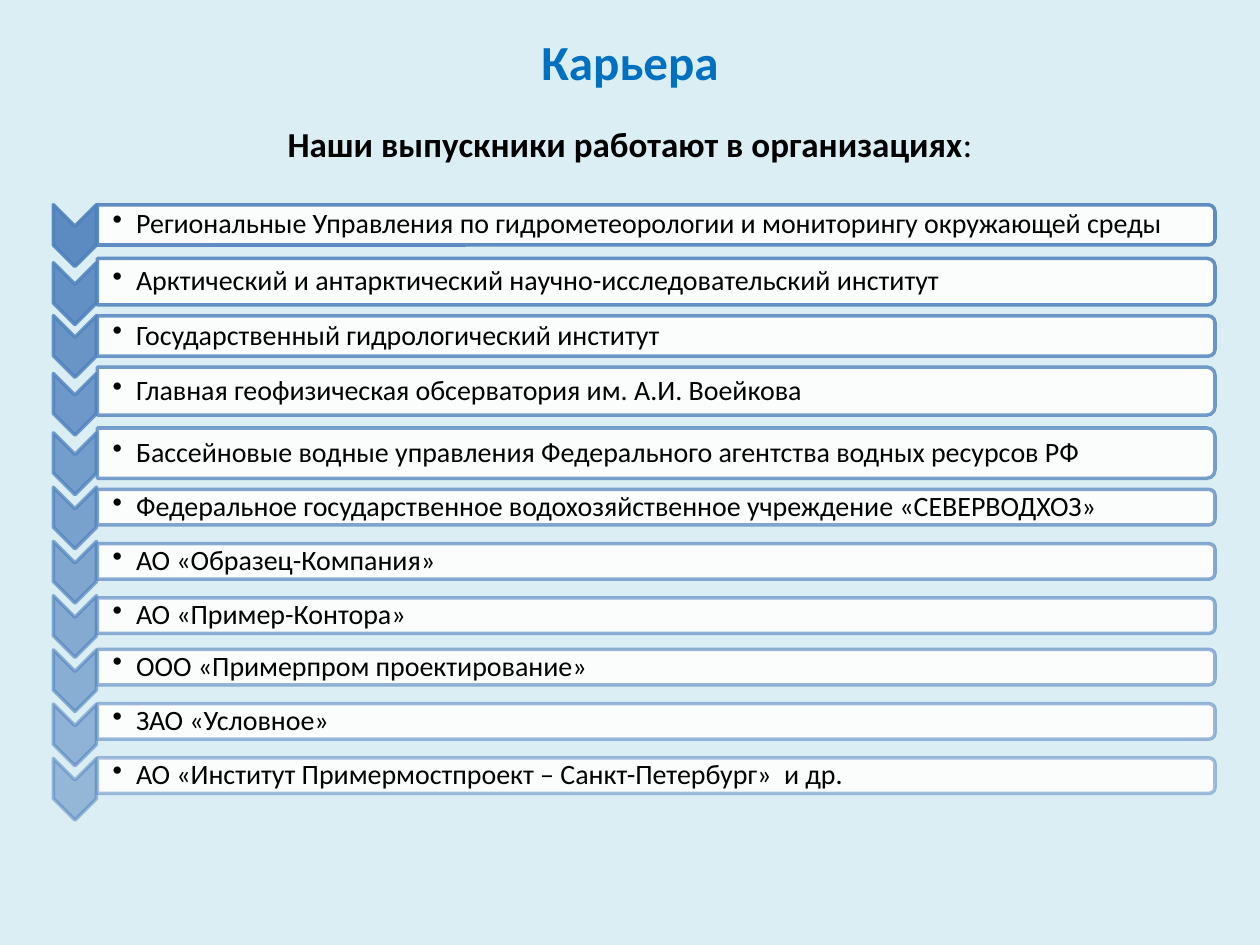
import pptx
import pptx.util
import pptx.dml.color
import pptx.enum.shapes
import pptx.enum.text
import pptx.oxml
import pptx.oxml.ns

Pt = pptx.util.Pt
MSO_SHAPE = pptx.enum.shapes.MSO_SHAPE
PP_ALIGN = pptx.enum.text.PP_ALIGN
MSO_ANCHOR = pptx.enum.text.MSO_ANCHOR

BACKGROUND = pptx.dml.color.RGBColor(0xDB, 0xEE, 0xF4)
TITLE_BLUE = pptx.dml.color.RGBColor(0x00, 0x70, 0xC0)
BLUE = pptx.dml.color.RGBColor(0x4F, 0x81, 0xBD)
WHITE = pptx.dml.color.RGBColor(0xFF, 0xFF, 0xFF)
BLACK = pptx.dml.color.RGBColor(0x00, 0x00, 0x00)


def add_text(p, text, size=16, color=BLACK, bold=False, align=PP_ALIGN.LEFT):
    p.alignment = align
    r = p.add_run()
    r.text = text
    r.font.name = "Calibri"
    r.font.size = Pt(size)
    r.font.bold = bold
    r.font.color.rgb = color


def add_vertical_shape(kind, cx, cy, w, h, fill, fill_alpha, line_alpha):
    sp = s.shapes.add_shape(kind, Pt(cx - w / 2), Pt(cy - h / 2), Pt(w), Pt(h))
    sp.rotation = 90
    sp.shadow.inherit = False
    sp.fill.solid()
    sp.fill.fore_color.rgb = fill
    sp.line.color.rgb = BLUE
    sp.line.width = Pt(2)
    colors = sp._element.spPr.iter(pptx.oxml.ns.qn("a:srgbClr"))
    for clr, alpha in zip(list(colors), (fill_alpha, line_alpha)):
        clr.append(pptx.oxml.parse_xml(
            f'<a:alpha {pptx.oxml.ns.nsdecls("a")} val="{alpha * 1000}"/>'))


prs = pptx.Presentation()
prs.slide_width, prs.slide_height = Pt(720), Pt(540)
s = prs.slides.add_slide(prs.slide_layouts[5])
s.background.fill.solid()
s.background.fill.fore_color.rgb = BACKGROUND

title = s.shapes.title
title.left, title.top, title.width, title.height = Pt(0), Pt(15), Pt(720), Pt(40)
title.text_frame.vertical_anchor = MSO_ANCHOR.MIDDLE
add_text(title.text_frame.paragraphs[0], "Карьера", size=28, color=TITLE_BLUE,
         bold=True, align=PP_ALIGN.CENTER)

subtitle = s.shapes.add_textbox(Pt(0), Pt(66.5), Pt(720), Pt(31.5))
subtitle.text_frame.word_wrap = True
p = subtitle.text_frame.paragraphs[0]
add_text(p, "Наши выпускники работают в организациях", size=20, bold=True,
         align=PP_ALIGN.CENTER)
add_text(p, ":", size=20, align=PP_ALIGN.CENTER)

employers = [
    ("Региональные Управления по гидрометеорологии и мониторингу окружающей среды", 128.5, 23, 134.6),
    ("Арктический и антарктический научно-исследовательский институт", 161, 26.6, 167.8),
    ("Государственный гидрологический институт", 192, 23, 198),
    ("Главная геофизическая обсерватория им. А.И. Воейкова", 223.5, 27.4, 231),
    ("Бассейновые водные управления Федерального агентства водных ресурсов РФ", 259, 28.8, 265),
    ("Федеральное государственное водохозяйственное учреждение «СЕВЕРВОДХОЗ»", 289.8, 20.2, 296),
    ("АО «Образец-Компания»", 320.8, 20.2, 327),
    ("АО «Пример-Контора»", 351.8, 20.2, 358),
    ("ООО «Примерпром проектирование»", 381.2, 20.2, 389),
    ("ЗАО «Условное»", 412.2, 20.2, 420),
    ("АО «Институт Примермостпроект – Санкт-Петербург»  и др.", 443.2, 20.2, 451),
]

BAR_LEFT, BAR_LENGTH = 55.7, 638.6

for i, (employer, cy, height, chevron_cy) in enumerate(employers):
    alpha = 90 - 4 * i
    add_vertical_shape(MSO_SHAPE.CHEVRON, 42.8, chevron_cy, 35.3, 24.6,
                       BLUE, alpha, alpha)
    add_vertical_shape(MSO_SHAPE.ROUND_2_SAME_RECTANGLE, BAR_LEFT + BAR_LENGTH / 2,
                       cy, height, BAR_LENGTH, WHITE, 90, alpha)
    text_height = height - 2.2
    box = s.shapes.add_textbox(Pt(BAR_LEFT), Pt(cy - text_height / 2),
                               Pt(BAR_LENGTH - 1), Pt(text_height))
    tf = box.text_frame
    tf.word_wrap = True
    tf.vertical_anchor = MSO_ANCHOR.MIDDLE
    tf.margin_left = Pt(8.6)
    tf.margin_top = tf.margin_right = tf.margin_bottom = Pt(0.8)
    p = tf.paragraphs[0]
    p.line_spacing = 0.9
    add_text(p, employer)
    pPr = p._p.get_or_add_pPr()
    pPr.set("marL", str(Pt(13.5)))
    pPr.set("indent", str(Pt(-13.5)))
    pPr.append(pptx.oxml.parse_xml(
        f'<a:buChar {pptx.oxml.ns.nsdecls("a")} char="•"/>'))

prs.save("out.pptx")
